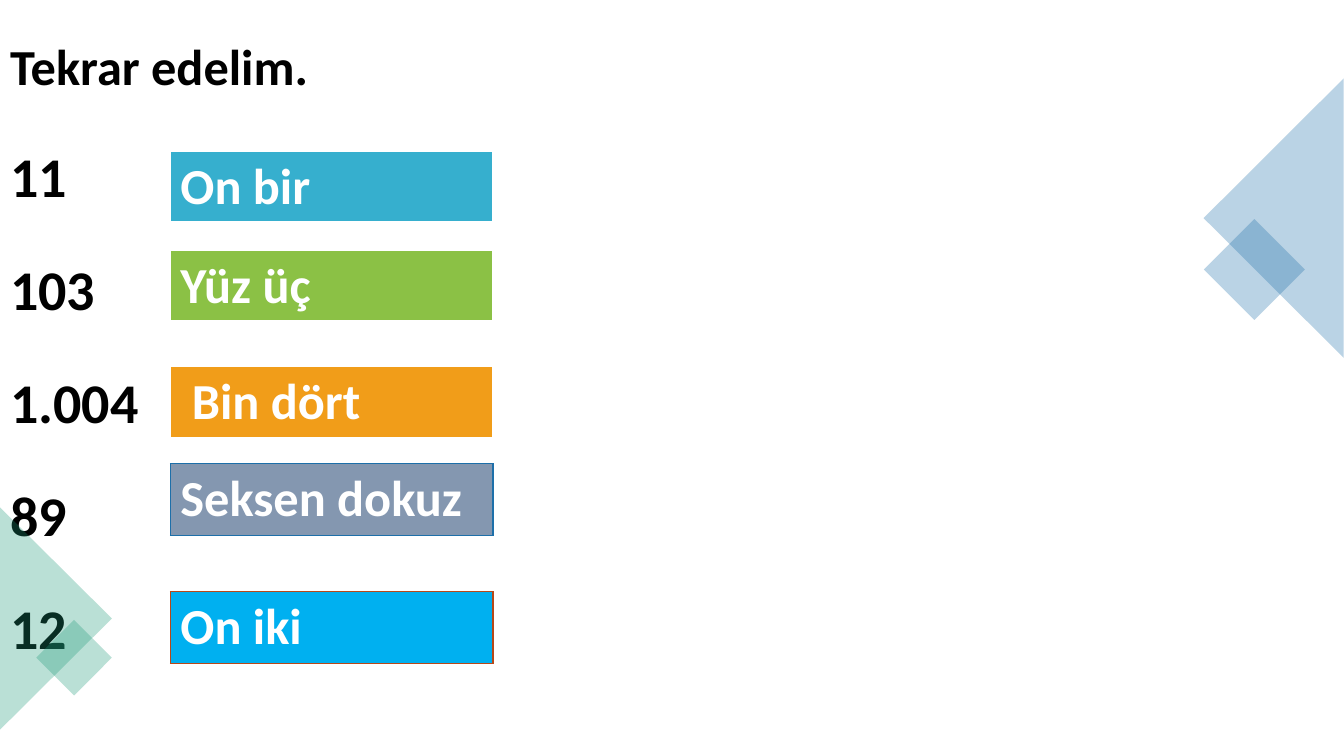
from lxml import etree
from pptx import Presentation
from pptx import util as u
from pptx.dml.color import RGBColor
from pptx.enum import shapes, text
from pptx.oxml.ns import qn

Pt = u.Pt


def paint(fill, color):
    fill.solid()
    fill.fore_color.rgb = RGBColor.from_string(color)


def style_run(run, size, color):
    run.font.name = "Calibri"
    run.font.size = Pt(size)
    run.font.bold = True
    run.font.color.rgb = RGBColor.from_string(color)


presentation = Presentation()
presentation.slide_width = Pt(960)
presentation.slide_height = Pt(540)
slide = presentation.slides.add_slide(presentation.slide_layouts[1])
title, body = slide.placeholders
title.element.getparent().remove(title.element)

# Heading and numerals
body.left, body.top, body.width, body.height = Pt(0), Pt(0), Pt(960), Pt(540)
frame = body.text_frame
frame.text = "Tekrar edelim.\n11\n103\n1.004\n89\n12"
frame.auto_size = text.MSO_AUTO_SIZE.NONE
frame.vertical_anchor = text.MSO_ANCHOR.TOP
for index, paragraph in enumerate(frame.paragraphs):
    paragraph.line_spacing = 1.5
    paragraph.space_before = Pt(8.7)
    properties = paragraph._p.get_or_add_pPr()
    properties.set("marL", "0")
    properties.set("indent", "0")
    etree.SubElement(properties, qn("a:buNone"))
    style_run(paragraph.runs[0], 40 if index else 36, "000000")

# Translucent corner ornaments
SQUARE = shapes.MSO_SHAPE.RECTANGLE
TRIANGLE = shapes.MSO_SHAPE.ISOSCELES_TRIANGLE
ornaments = [
    (SQUARE, 870.5, 167, 51, 51, 45, "1D6FA9"),
    (TRIANGLE, 810, 105.8, 199.5, 100, 270, "1D6FA9"),
    (TRIANGLE, -39.6, 401.8, 159, 80, 90, "1D9A78"),
    (SQUARE, 33.8, 450.7, 38.2, 38.2, 45, "1D9A78"),
]
for kind, left, top, width, height, rotation, color in ornaments:
    shape = slide.shapes.add_shape(kind, Pt(left), Pt(top), Pt(width), Pt(height))
    shape.rotation = rotation
    shape.shadow.inherit = False
    shape.line.fill.background()
    paint(shape.fill, color)
    color_element = shape.element.spPr.find(qn("a:solidFill"))[0]
    etree.SubElement(color_element, qn("a:alpha"), val="30000")

# Numbers in words: text, top, fill, border colour, bottom border width
answers = [
    ("On bir", 108, "36AFCE", "FFFFFF", 3),
    ("Yüz üç", 178.6, "8BC145", "FFFFFF", 3),
    (" Bin dört", 262, "F19D19", "FFFFFF", 3),
    ("Seksen dokuz", 331.2, "8497B0", "1D6FA9", 1),
    ("On iki", 422.6, "00B0F0", "B74919", 1),
]
for words, top, color, border, bottom_width in answers:
    graphic = slide.shapes.add_table(1, 1, Pt(121.7), Pt(top), Pt(230.4), Pt(50.4))
    cell = graphic.table.cell(0, 0)
    cell.text = words
    style_run(cell.text_frame.paragraphs[0].runs[0], 36, "FFFFFF")
    paint(cell.fill, color)
    properties = cell._tc.get_or_add_tcPr()
    for position, side in enumerate(("lnL", "lnR", "lnT", "lnB")):
        width = Pt(bottom_width if side == "lnB" else 1)
        line = etree.Element(qn(f"a:{side}"), w=str(width))
        solid = etree.SubElement(line, qn("a:solidFill"))
        etree.SubElement(solid, qn("a:srgbClr"), val=border)
        properties.insert(position, line)

presentation.save("out.pptx")
